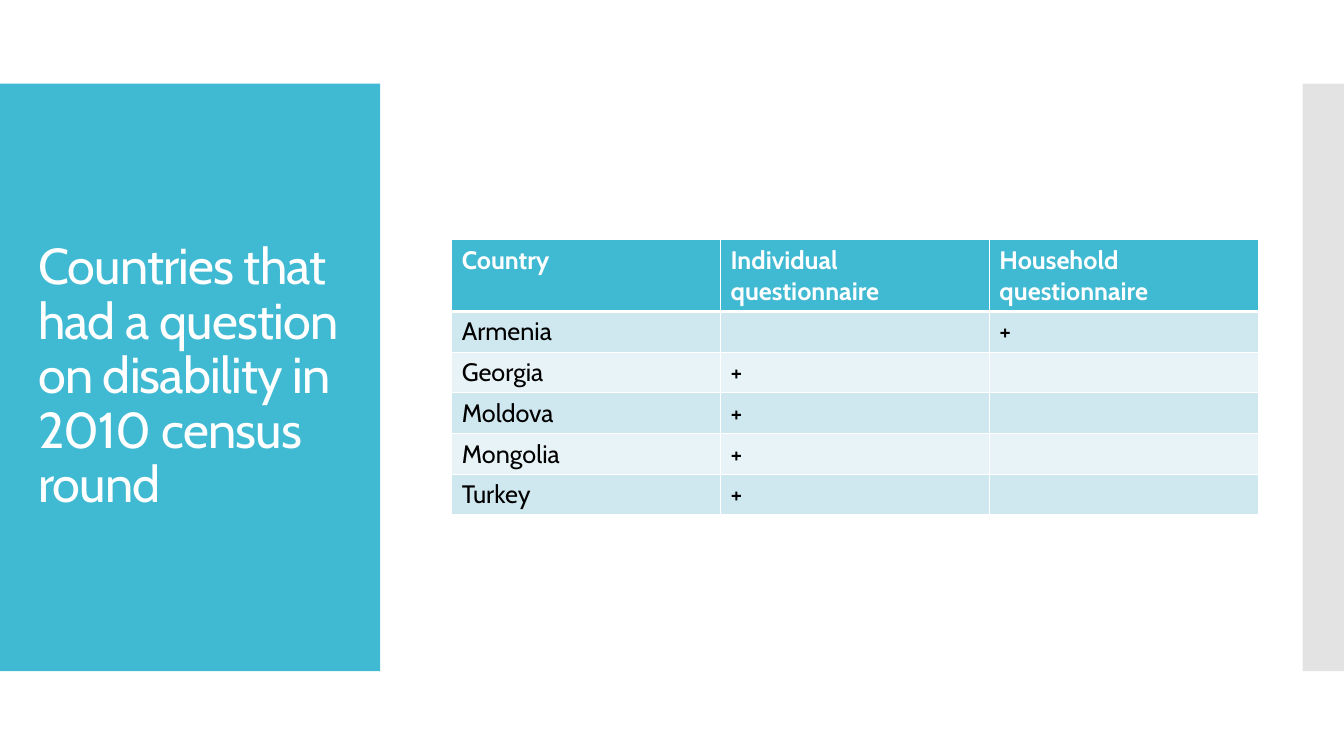
from dataclasses import dataclass

from lxml import etree
from pptx import Presentation
from pptx import util as u
from pptx.dml.color import RGBColor
from pptx.enum import shapes, text
from pptx.oxml.ns import qn


@dataclass(frozen=True)
class Theme:
    """Colours, font and type sizes of the deck."""
    accent: str = "40BAD2"
    edge: str = "C8C8C8"
    bands: tuple = ("CFE7EE", "E8F3F7")
    light: str = "FFFFFF"
    dark: str = "000000"
    font: str = "Cabin"
    title_size: int = 36
    table_size: int = 18


THEME = Theme()
TITLE = "Countries that had a question on disability in 2010 census round"
ROWS = [
    ("Country", "Individual questionnaire", "Household questionnaire"),
    ("Armenia", "", "+"),
    ("Georgia", "+", ""),
    ("Moldova", "+", ""),
    ("Mongolia", "+", ""),
    ("Turkey", "+", ""),
]


def add_span(para, words, size, color, bold=False):
    """Add one styled run to a paragraph."""
    span = para.add_run()
    span.text = words
    span.font.name = THEME.font
    span.font.size = u.Pt(size)
    span.font.bold = bold
    span.font.color.rgb = RGBColor.from_string(color)
    return span


def add_panel(page, box, color):
    """Draw a plain filled rectangle."""
    panel = page.shapes.add_shape(shapes.MSO_SHAPE.RECTANGLE, *map(u.Inches, box))
    panel.shadow.inherit = False
    panel.fill.solid()
    panel.fill.fore_color.rgb = RGBColor.from_string(color)
    panel.line.fill.background()
    return panel


def add_title_panel(page, box):
    """Draw the coloured panel with the title centred vertically in it."""
    left, top, width, height = box
    add_panel(page, box, THEME.accent)
    area = (left + 0.28, top + 0.4, width - 0.55, height - 0.8)
    frame = page.shapes.add_textbox(*map(u.Inches, area)).text_frame
    frame.word_wrap = True
    frame.vertical_anchor = text.MSO_ANCHOR.MIDDLE
    para = frame.paragraphs[0]
    para.line_spacing = 0.9
    span = add_span(para, TITLE, THEME.title_size, THEME.light)
    span.font._element.set("spc", "-60")


def add_edge_panel(page, box):
    """Draw the half-transparent panel at the slide edge."""
    panel = add_panel(page, box, THEME.edge)
    color = panel.fill._xPr.find(qn("a:solidFill"))[0]
    etree.SubElement(color, qn("a:alpha"), val="50000")


def set_borders(cell, widths):
    """Give a cell light borders, with widths in points keyed by side."""
    props = cell._tc.get_or_add_tcPr()
    for side, width in widths.items():
        line = etree.SubElement(props, qn(f"a:ln{side}"), w=str(u.Pt(width)))
        fill = etree.SubElement(line, qn("a:solidFill"))
        etree.SubElement(fill, qn("a:srgbClr"), val=THEME.light)


def add_country_table(page, box, header_height):
    """Draw the banded table of countries and questionnaires."""
    height = box[3]
    frame = page.shapes.add_table(len(ROWS), len(ROWS[0]), *map(u.Inches, box))
    table = frame.table
    row_height = (height - header_height) / (len(ROWS) - 1)
    for row, values in enumerate(ROWS):
        header = row == 0
        table.rows[row].height = u.Inches(header_height if header else row_height)
        fill = THEME.accent if header else THEME.bands[(row - 1) % 2]
        color = THEME.light if header else THEME.dark
        widths = {"L": 1, "R": 1, "T": 3 if row == 1 else 1, "B": 3 if header else 1}
        for column, value in enumerate(values):
            cell = table.cell(row, column)
            set_borders(cell, widths)
            cell.fill.solid()
            cell.fill.fore_color.rgb = RGBColor.from_string(fill)
            para = cell.text_frame.paragraphs[0]
            if value:
                add_span(para, value, THEME.table_size, color, header)


def main():
    """Build the slide and save the deck."""
    deck = Presentation()
    deck.slide_width, deck.slide_height = u.Inches(13.33), u.Inches(7.5)
    page = deck.slides.add_slide(deck.slide_layouts[6])
    add_title_panel(page, (0, 0.83, 3.77, 5.83))
    add_edge_panel(page, (12.92, 0.83, 0.41, 5.83))
    add_country_table(page, (4.48, 2.38, 8, 2.73), 0.71)
    deck.save("out.pptx")


if __name__ == "__main__":
    main()
